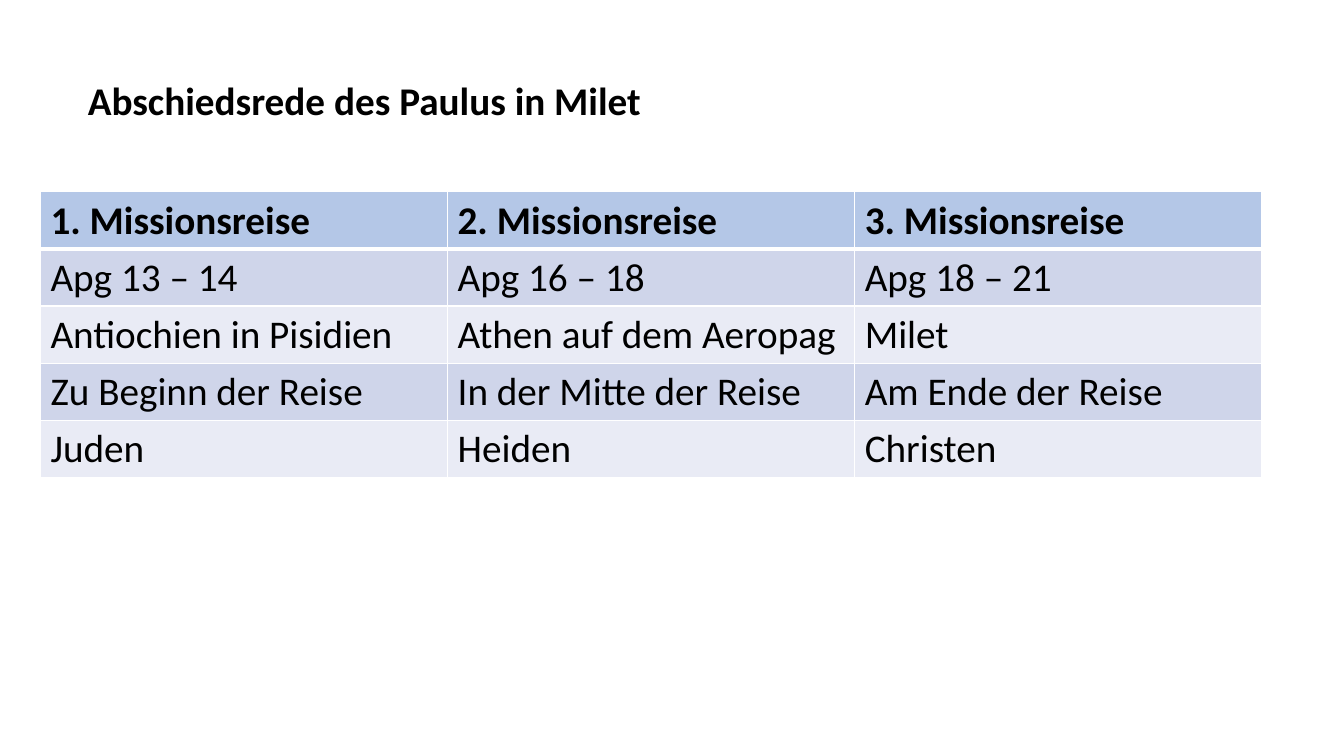
from lxml import etree
from pptx import Presentation
from pptx.dml.color import RGBColor
from pptx.enum.text import MSO_ANCHOR, MSO_AUTO_SIZE, PP_ALIGN
from pptx.oxml.ns import qn
from pptx.util import Cm, Pt

LEFT = PP_ALIGN.LEFT
TOP = MSO_ANCHOR.TOP
GROW = MSO_AUTO_SIZE.SHAPE_TO_FIT_TEXT

# Content
TITLE = "Abschiedsrede des Paulus in Milet"
JOURNEYS = [
    ("1. Missionsreise", "2. Missionsreise", "3. Missionsreise"),
    ("Apg 13 – 14", "Apg 16 – 18", "Apg 18 – 21"),
    ("Antiochien in Pisidien", "Athen auf dem Aeropag", "Milet"),
    ("Zu Beginn der Reise", "In der Mitte der Reise", "Am Ende der Reise"),
    ("Juden", "Heiden", "Christen"),
]

# Look
FONT, SIZE = "Calibri", Pt(28)
TEXT, BORDER = "000000", "FFFFFF"
HEADER_FILL = "B4C7E7"
BAND_FILLS = ("E9EBF5", "CFD5EA")
THIN, THICK = Pt(1), Pt(3)
COLUMN_WIDTH, ROW_HEIGHT = Cm(10.26), Cm(1.44)


def color(value):
    return RGBColor.from_string(value)


def write(frame, text, bold):
    para = frame.paragraphs[0]
    para.alignment = LEFT
    span = para.add_run()
    span.text = text
    span.font.name = FONT
    span.font.size = SIZE
    span.font.bold = bold
    span.font.color.rgb = color(TEXT)


def add_border(cell, side, width):
    line = etree.SubElement(cell._tc.get_or_add_tcPr(), qn(f"a:ln{side}"), w=str(width))
    fill = etree.SubElement(line, qn("a:solidFill"))
    etree.SubElement(fill, qn("a:srgbClr"), val=BORDER)


def add_title(page):
    box = page.shapes.title
    box.left, box.top, box.width, box.height = Cm(1.96), Cm(1.8), Cm(14.6), Cm(1.45)
    frame = box.text_frame
    frame.word_wrap = False
    frame.auto_size = GROW
    frame.vertical_anchor = TOP
    write(frame, TITLE, True)


def add_journeys(page):
    rows, columns = len(JOURNEYS), len(JOURNEYS[0])
    table = page.shapes.add_table(
        rows, columns, Cm(1.02), Cm(4.83), COLUMN_WIDTH * columns, ROW_HEIGHT * rows
    ).table
    for column in table.columns:
        column.width = COLUMN_WIDTH
    for r, texts in enumerate(JOURNEYS):
        table.rows[r].height = ROW_HEIGHT
        header = r == 0
        # The thick rule lies between the header and the first row
        widths = {
            "L": THIN,
            "R": THIN,
            "T": THICK if r == 1 else THIN,
            "B": THICK if header else THIN,
        }
        for c, text in enumerate(texts):
            cell = table.cell(r, c)
            for side, width in widths.items():
                add_border(cell, side, width)
            cell.fill.solid()
            cell.fill.fore_color.rgb = color(HEADER_FILL if header else BAND_FILLS[r % 2])
            write(cell.text_frame, text, header)


def main():
    deck = Presentation()
    deck.slide_width, deck.slide_height = Cm(33.87), Cm(19.05)
    page = deck.slides.add_slide(deck.slide_layouts[5])
    add_title(page)
    add_journeys(page)
    deck.save("out.pptx")


if __name__ == "__main__":
    main()
